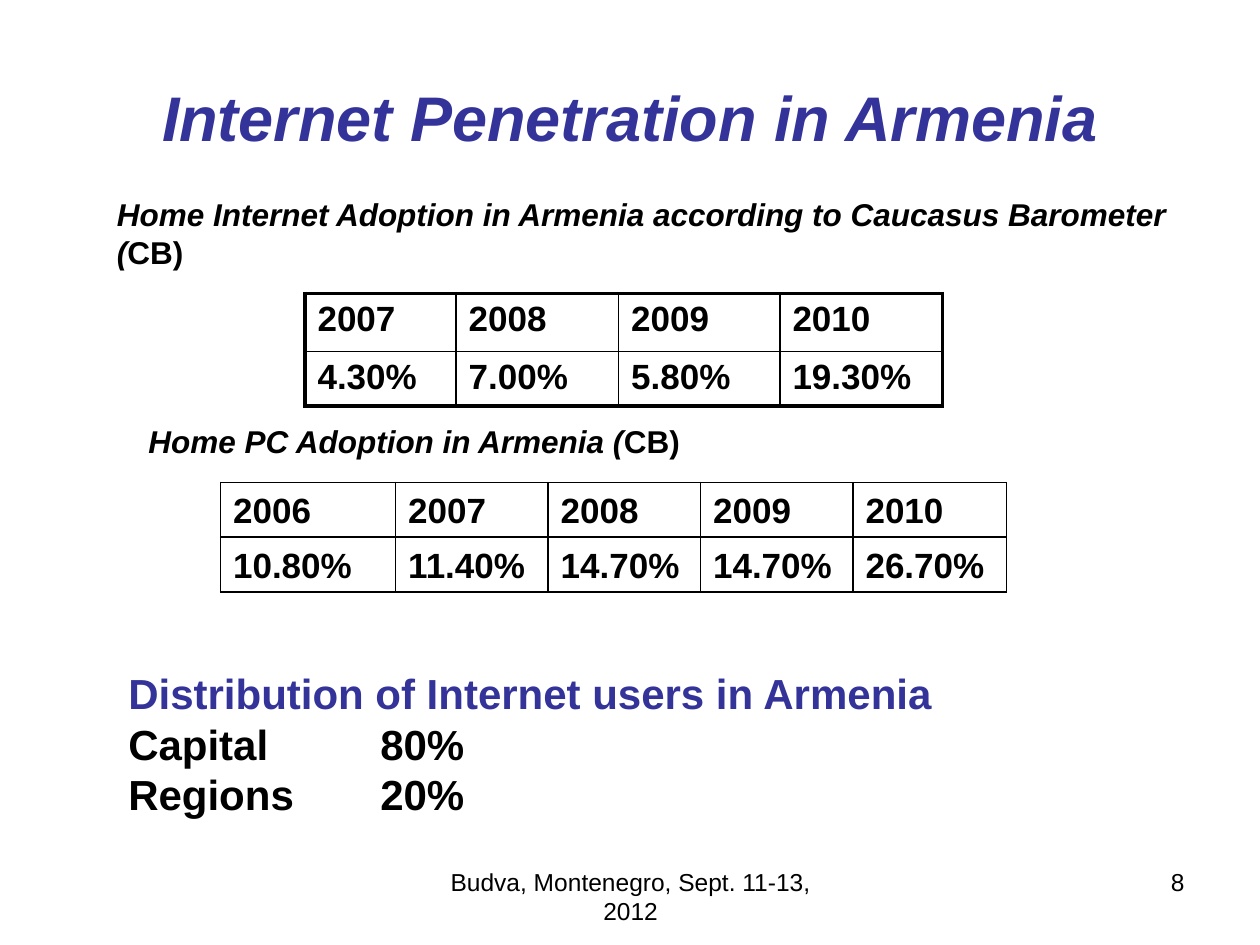
from dataclasses import dataclass

from lxml.etree import SubElement
from pptx import Presentation
from pptx.dml.color import RGBColor as RGB
from pptx.enum.text import MSO_ANCHOR as Anchor, PP_ALIGN as Align
from pptx.oxml.ns import qn
from pptx.util import Pt

PX = 9144  # EMU per px, 100 px to the inch


@dataclass(frozen=True)
class Theme:
    font: str = "Arial"
    ink: RGB = RGB(0, 0, 0)
    accent: RGB = RGB(0x33, 0x33, 0x99)
    title: int = 36
    heading: int = 24
    cell: int = 20
    label: int = 18
    footer: int = 14
    thin: float = 1
    thick: float = 2.25


THEME = Theme()


def emu(lengths):
    return [length * PX for length in lengths]


def write(frame, runs, size, align=Align.LEFT, anchor=Anchor.TOP):
    """Fill a frame with one paragraph of (text, format) runs; a newline breaks the line."""
    frame.word_wrap = True
    frame.vertical_anchor = anchor
    paragraph = frame.paragraphs[0]
    paragraph.alignment = align
    for text, changes in runs:
        values = {"name": THEME.font, "size": Pt(size), "bold": True, "italic": False,
                  "color": THEME.ink, **changes}
        for number, line in enumerate(text.split("\n")):
            if number:
                paragraph.add_line_break()
            if not line:
                continue
            run = paragraph.add_run()
            run.text = line
            for name, value in values.items():
                if name == "color":
                    run.font.color.rgb = value
                else:
                    setattr(run.font, name, value)


def add_text(slide, box, runs, size, **layout):
    shape = slide.shapes.add_textbox(*emu(box))
    write(shape.text_frame, runs, size, **layout)


def add_title(slide, box, text):
    title = slide.shapes.title
    title.left, title.top, title.width, title.height = emu(box)
    write(title.text_frame, [(text, {"italic": True, "color": THEME.accent})],
          THEME.title, align=Align.CENTER, anchor=Anchor.MIDDLE)


def set_borders(cell, widths):
    """Draw the left, right, top and bottom lines of a cell, widths in points."""
    properties = cell._tc.get_or_add_tcPr()
    for position, (side, width) in enumerate(zip("LRTB", widths)):
        line = SubElement(properties, qn(f"a:ln{side}"), w=str(Pt(width)))
        fill = SubElement(line, qn("a:solidFill"))
        SubElement(fill, qn("a:srgbClr"), val=str(THEME.ink))
        properties.insert(position, line)


def add_year_table(slide, origin, columns, rows, data, outline, anchor):
    """Add a plain grid with thin inner lines and the given outline width."""
    box = (*origin, sum(columns), sum(rows))
    table = slide.shapes.add_table(len(rows), len(columns), *emu(box)).table
    table.first_row = table.horz_banding = False
    for column, width in zip(table.columns, emu(columns)):
        column.width = width
    for row, height in zip(table.rows, emu(rows)):
        row.height = height
    last_row, last_column = len(rows) - 1, len(columns) - 1
    for r, texts in enumerate(data):
        for c, text in enumerate(texts):
            cell = table.cell(r, c)
            cell.fill.background()
            cell.vertical_anchor = anchor
            outer = (c == 0, c == last_column, r == 0, r == last_row)
            set_borders(cell, [outline if edge else THEME.thin for edge in outer])
            write(cell.text_frame, [(text, {})], THEME.cell, anchor=anchor)


def add_adoption(slide, label, label_box, label_anchor, **table):
    """Add a label ending in the survey's short name, with its table of years."""
    runs = [(label + " (", {"italic": True}), ("CB)", {})]
    add_text(slide, label_box, runs, THEME.label, anchor=label_anchor)
    add_year_table(slide, **table)


def add_distribution(slide, box):
    runs = [("Distribution of Internet users in Armenia\n", {"color": THEME.accent}),
            ("Capital\t\t80%\nRegions\t\t20%", {})]
    add_text(slide, box, runs, THEME.heading)


def add_footer(slide, top, height):
    plain = {"bold": False}
    add_text(slide, (342, top, 317, height),
             [("Budva, Montenegro, Sept. 11-13, 2012", plain)],
             THEME.footer, align=Align.CENTER)
    add_text(slide, (717, top, 233, height), [("8", plain)],
             THEME.footer, align=Align.RIGHT)


def main():
    presentation = Presentation()
    presentation.slide_width, presentation.slide_height = emu((1000, 750))
    slide = presentation.slides.add_slide(presentation.slide_layouts[5])

    add_title(slide, (50, 30, 900, 125), "Internet Penetration in Armenia")

    # Home internet
    add_adoption(
        slide, "Home Internet Adoption in Armenia according to Caucasus Barometer",
        (83, 150, 900, 100), Anchor.TOP,
        origin=(242, 233), columns=[120, 129, 128, 129], rows=[46, 43],
        data=[["2007", "2008", "2009", "2010"],
              ["4.30%", "7.00%", "5.80%", "19.30%"]],
        outline=THEME.thick, anchor=Anchor.TOP)

    # Home computers
    add_adoption(
        slide, "Home PC Adoption in Armenia", (108, 330, 508, 40), Anchor.MIDDLE,
        origin=(175, 383), columns=[139, 121, 121, 121, 122], rows=[43, 43],
        data=[["2006", "2007", "2008", "2009", "2010"],
              ["10.80%", "11.40%", "14.70%", "14.70%", "26.70%"]],
        outline=THEME.thin, anchor=Anchor.BOTTOM)

    add_distribution(slide, (92, 525, 817, 130))
    add_footer(slide, 683, 52)
    presentation.save("out.pptx")


if __name__ == "__main__":
    main()
